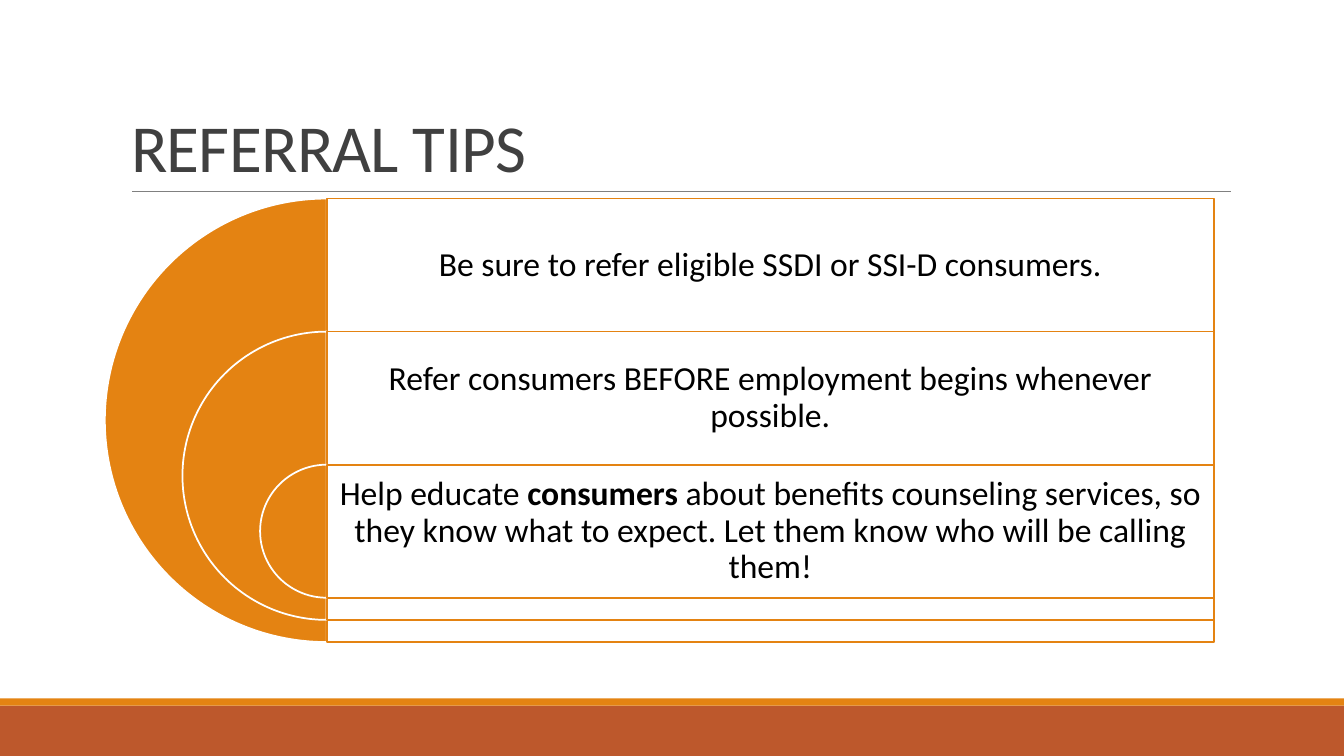
import pptx
import pptx.util
import pptx.dml.color
import pptx.enum.shapes
import pptx.enum.text
import pptx.oxml
import pptx.oxml.ns

Inches = pptx.util.Inches
Pt = pptx.util.Pt
SHAPE = pptx.enum.shapes.MSO_SHAPE
ALIGN = pptx.enum.text.PP_ALIGN
ANCHOR = pptx.enum.text.MSO_ANCHOR
AUTO_SIZE = pptx.enum.text.MSO_AUTO_SIZE

ORANGE, RUST, WHITE = "E48312", "BD582C", "FFFFFF"
TIPS = [
    [("Be sure to refer eligible SSDI or SSI-D consumers.", False)],
    [("Refer consumers BEFORE employment begins whenever possible.", False)],
    [("Help educate ", False), ("consumers", True),
     (" about benefits counseling services, so they know what to expect. "
      "Let them know who will be calling them!", False)],
]


def rgb(value):
    return pptx.dml.color.RGBColor.from_string(value)


def apply(obj, values):
    for name, value in values.items():
        setattr(obj, name, value)


def place(box):
    return [Inches(v) for v in box]


def add_filled(s, kind, box, fill, line=None):
    sp = s.shapes.add_shape(kind, *place(box))
    sp.shadow.inherit = False
    sp.fill.solid()
    sp.fill.fore_color.rgb = rgb(fill)
    if line:
        sp.line.color.rgb = rgb(line)
        sp.line.width = Pt(1.25)
    else:
        sp.line.fill.background()
    return sp


def set_alpha(sp, percent):
    color = sp.fill._xPr.find(".//" + pptx.oxml.ns.qn("a:srgbClr"))
    alpha = pptx.oxml.parse_xml(
        f'<a:alpha {pptx.oxml.ns.nsdecls("a")} val="{percent * 1000}"/>')
    color.append(alpha)


def add_run(p, text, size, color, bold=False):
    r = p.add_run()
    r.text = text
    apply(r.font, {"name": "Calibri", "size": Pt(size), "bold": bold})
    r.font.color.rgb = rgb(color)
    return r


def add_footer_bands(s, box):
    left, top, width, height = box
    stripe = 0.07
    add_filled(s, SHAPE.RECTANGLE, (left, top + stripe, width, height - stripe), RUST)
    add_filled(s, SHAPE.RECTANGLE, (left, top, width, stripe), ORANGE)


def add_title(s, box, text):
    left, top, width, height = box
    bottom = top + height
    rule = s.shapes.add_connector(
        pptx.enum.shapes.MSO_CONNECTOR.STRAIGHT,
        *place((left + 0.11, bottom, left + width + 0.01, bottom)))
    rule.line.color.rgb = rgb("808080")
    rule.line.width = Pt(0.5)
    rule._element.spPr.append(
        pptx.oxml.parse_xml(f'<a:effectLst {pptx.oxml.ns.nsdecls("a")}/>'))

    sp = s.shapes.title
    apply(sp, dict(zip(("left", "top", "width", "height"), place(box))))
    tf = sp.text_frame
    apply(tf, {"word_wrap": True, "auto_size": AUTO_SIZE.NONE,
               "vertical_anchor": ANCHOR.BOTTOM})
    p = tf.paragraphs[0]
    apply(p, {"alignment": ALIGN.LEFT, "line_spacing": 0.85})
    r = add_run(p, text, 48, "404040")
    r.font._element.set("spc", "-50")


def add_tip_text(s, box, parts):
    tf = s.shapes.add_textbox(*place(box)).text_frame
    margin = Inches(0.1)
    apply(tf, {"word_wrap": True, "vertical_anchor": ANCHOR.MIDDLE,
               "margin_left": margin, "margin_right": margin,
               "margin_top": margin, "margin_bottom": margin})
    p = tf.paragraphs[0]
    apply(p, {"alignment": ALIGN.CENTER, "line_spacing": 0.9})
    for text, bold in parts:
        add_run(p, text, 24, "000000", bold)


def add_nested_tips(s, box, tips):
    left, top, width, height = box
    row = height * 0.3
    step = height * 0.35
    axis = left + height / 2
    panel_width = width - height / 2
    for i, parts in enumerate(tips):
        size = height - i * step
        y = top + i * row
        pie = add_filled(s, SHAPE.PIE, (axis - size / 2, y, size, size), ORANGE, WHITE)
        pie.adjustments[0] = 54
        pie.adjustments[1] = 162
        panel = add_filled(s, SHAPE.RECTANGLE, (axis, y, panel_width, size), WHITE, ORANGE)
        set_alpha(panel, 90)
        add_tip_text(s, (axis, y, panel_width, row), parts)


def main():
    prs = pptx.Presentation()
    apply(prs, {"slide_width": Inches(13.33), "slide_height": Inches(7.5)})
    s = prs.slides.add_slide(prs.slide_layouts[5])
    add_footer_bands(s, (0, 6.93, 13.33, 0.57))
    add_title(s, (1.2, 0.31, 11, 1.59), "REFERRAL TIPS")
    add_nested_tips(s, (1.04, 1.97, 11, 4.4), TIPS)
    prs.save("out.pptx")


if __name__ == "__main__":
    main()
